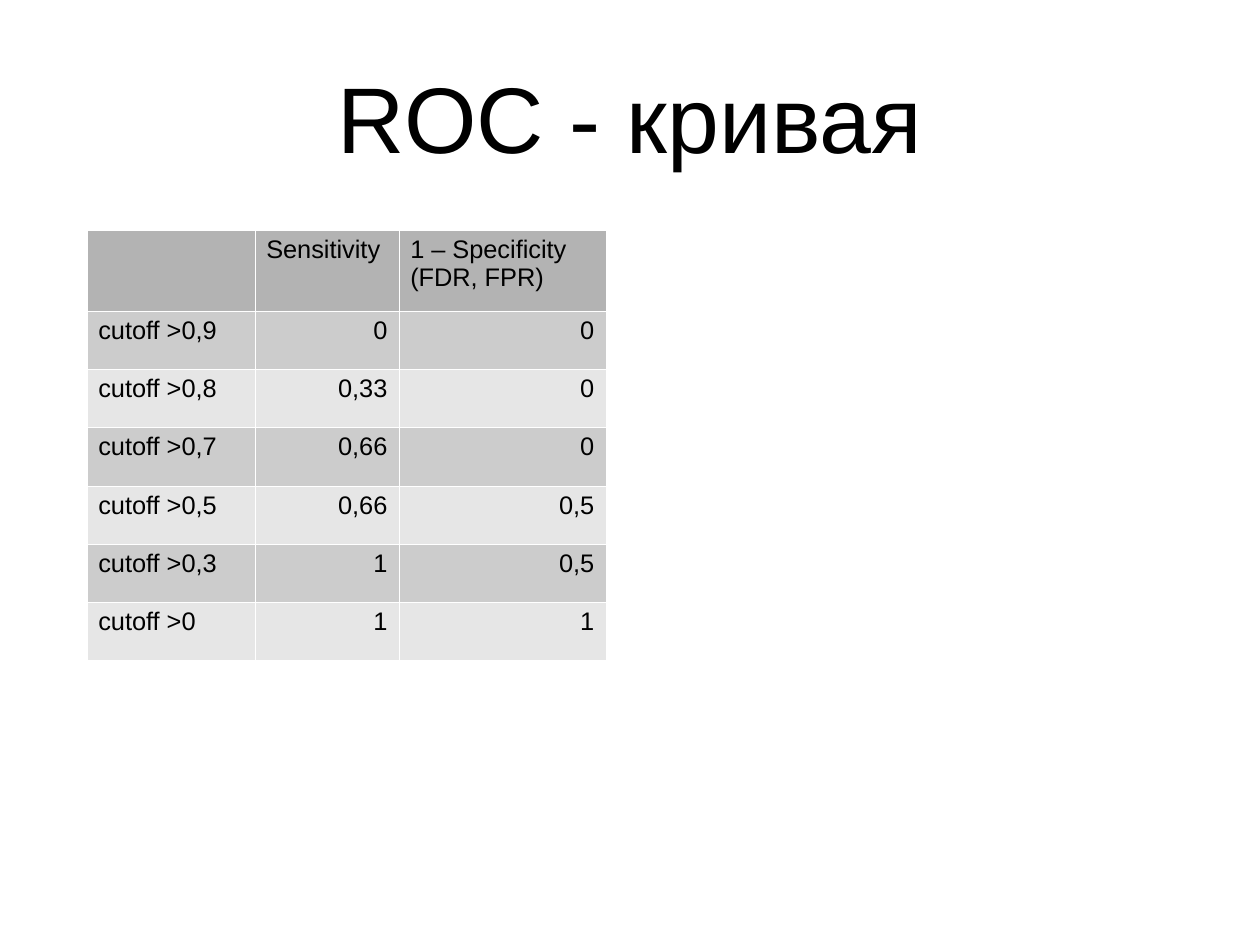
from dataclasses import dataclass

from lxml import etree
from pptx import Presentation
from pptx.dml.color import RGBColor
from pptx.enum.text import MSO_ANCHOR, PP_ALIGN
from pptx.oxml.ns import qn
from pptx.slide import Slide
from pptx.table import _Cell
from pptx.text.text import _Paragraph
from pptx.util import Inches, Pt

LEFT, CENTER, RIGHT = PP_ALIGN.LEFT, PP_ALIGN.CENTER, PP_ALIGN.RIGHT
MIDDLE = MSO_ANCHOR.MIDDLE
TITLE_ONLY = 5

CM_PER_INCH = 2.54
PAGE_WIDTH, PAGE_HEIGHT = 28 / CM_PER_INCH, 21 / CM_PER_INCH

FONT = "Arial"
COLORS = {
    "text": "000000",
    "border": "FFFFFF",
    "header": "B3B3B3",
    "odd": "CCCCCC",
    "even": "E6E6E6",
}
BORDER_WIDTH = Pt(0.06)
COLUMN_WIDTHS = (1.47, 1.26, 1.81)
HEADER_HEIGHT, ROW_HEIGHT = 0.71, 0.51


@dataclass(frozen=True)
class Cutoff:
    label: str
    sensitivity: str
    false_rate: str


HEADER = Cutoff("", "Sensitivity", "1 – Specificity (FDR, FPR)")
CUTOFFS = (
    Cutoff("cutoff >0,9", "0", "0"),
    Cutoff("cutoff >0,8", "0,33", "0"),
    Cutoff("cutoff >0,7", "0,66", "0"),
    Cutoff("cutoff >0,5", "0,66", "0,5"),
    Cutoff("cutoff >0,3", "1", "0,5"),
    Cutoff("cutoff >0", "1", "1"),
)


def format_paragraph(para: _Paragraph, size: float, alignment: PP_ALIGN) -> None:
    para.alignment = alignment
    para.font.name = FONT
    para.font.size = Pt(size)
    para.font.bold = False
    para.font.color.rgb = RGBColor.from_string(COLORS["text"])


def add_borders(cell: _Cell) -> None:
    properties = cell._tc.get_or_add_tcPr()
    for side in ("a:lnL", "a:lnR", "a:lnT", "a:lnB"):
        line = etree.SubElement(properties, qn(side), w=str(int(BORDER_WIDTH)))
        fill = etree.SubElement(line, qn("a:solidFill"))
        etree.SubElement(fill, qn("a:srgbClr"), val=COLORS["border"])


def fill_cell(cell: _Cell, text: str, color: str, alignment: PP_ALIGN) -> None:
    add_borders(cell)
    cell.fill.solid()
    cell.fill.fore_color.rgb = RGBColor.from_string(COLORS[color])
    cell.text = text
    format_paragraph(cell.text_frame.paragraphs[0], 16, alignment)


def add_title(page: Slide) -> None:
    title = page.shapes.title
    title.left, title.top = Inches(0.55), Inches(0.33)
    title.width, title.height = Inches(9.92), Inches(1.38)
    frame = title.text_frame
    frame.margin_left = frame.margin_right = 0
    frame.margin_top = frame.margin_bottom = 0
    frame.vertical_anchor = MIDDLE
    frame.text = "ROC - кривая"
    format_paragraph(frame.paragraphs[0], 58.7, CENTER)


def add_cutoff_table(page: Slide) -> None:
    rows = (HEADER, *CUTOFFS)
    height = HEADER_HEIGHT + ROW_HEIGHT * len(CUTOFFS)
    table = page.shapes.add_table(
        len(rows), len(COLUMN_WIDTHS), Inches(0.76), Inches(2.01),
        Inches(sum(COLUMN_WIDTHS)), Inches(height),
    ).table
    for column, width in zip(table.columns, COLUMN_WIDTHS):
        column.width = Inches(width)
    for index, row in enumerate(rows):
        is_header = index == 0
        table.rows[index].height = Inches(HEADER_HEIGHT if is_header else ROW_HEIGHT)
        color = "header" if is_header else "odd" if index % 2 else "even"
        value_alignment = LEFT if is_header else RIGHT
        fill_cell(table.cell(index, 0), row.label, color, LEFT)
        fill_cell(table.cell(index, 1), row.sensitivity, color, value_alignment)
        fill_cell(table.cell(index, 2), row.false_rate, color, value_alignment)


def main() -> None:
    deck = Presentation()
    deck.slide_width, deck.slide_height = Inches(PAGE_WIDTH), Inches(PAGE_HEIGHT)
    page = deck.slides.add_slide(deck.slide_layouts[TITLE_ONLY])
    add_title(page)
    add_cutoff_table(page)
    deck.save("out.pptx")


if __name__ == "__main__":
    main()
